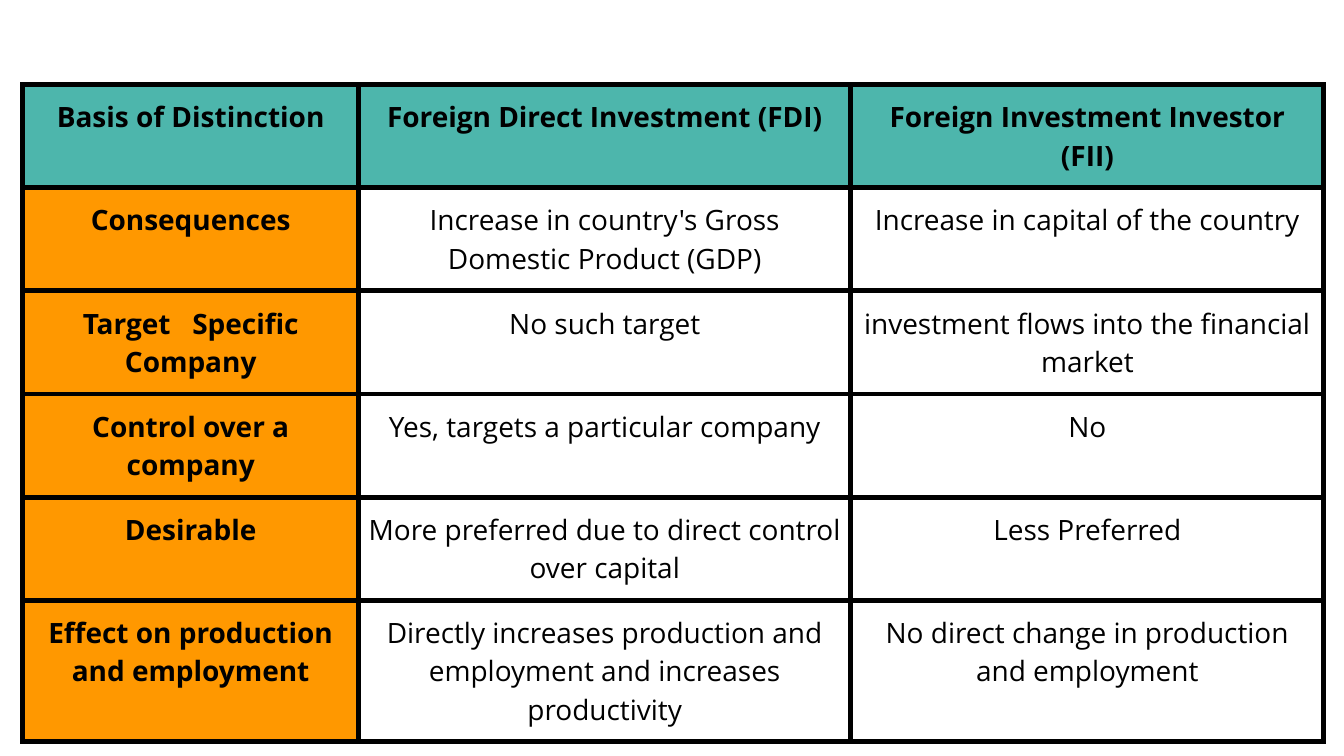
from pptx import Presentation
from pptx.dml.color import RGBColor
from pptx.enum.text import PP_ALIGN
from pptx.oxml import parse_xml
from pptx.oxml.ns import nsdecls
from pptx.util import Cm, Pt

BLACK = RGBColor(0x00, 0x00, 0x00)
TEAL = RGBColor(0x4D, 0xB6, 0xAC)
ORANGE = RGBColor(0xFF, 0x98, 0x00)

COL_WIDTHS = [6.35, 9.3, 8.94]
ROW_HEIGHTS = [1] * 5 + [1.45]
ROWS = [
    ("Basis of Distinction", "Foreign Direct Investment (FDI)",
     "Foreign Investment Investor (FII)"),
    ("Consequences", "Increase in country's Gross Domestic Product (GDP)",
     "Increase in capital of the country"),
    ("Target   Specific Company", "No such target",
     "investment flows into the financial market"),
    ("Control over a company", "Yes, targets a particular company", "No"),
    ("Desirable", "More preferred due to direct control over capital",
     "Less Preferred"),
    ("Effect on production and employment",
     "Directly increases production and employment and increases productivity",
     "No direct change in production and employment"),
]


def add_borders(cell, color, width):
    tc_pr = cell._tc.get_or_add_tcPr()
    for side in ("lnL", "lnR", "lnT", "lnB"):
        tc_pr.append(parse_xml(
            f'<a:{side} {nsdecls("a")} w="{width}"><a:solidFill>'
            f'<a:srgbClr val="{color}"/></a:solidFill></a:{side}>'))


prs = Presentation()
prs.slide_width, prs.slide_height = Cm(25.4), Cm(14.29)
s = prs.slides.add_slide(prs.slide_layouts[6])

frame = s.shapes.add_table(len(ROWS), len(COL_WIDTHS), Cm(0.43), Cm(1.6),
                           Cm(sum(COL_WIDTHS)), Cm(11.3))
table = frame.table
table.first_row = table.horz_banding = False
for column, width in zip(table.columns, COL_WIDTHS):
    column.width = Cm(width)
for row, height in zip(table.rows, ROW_HEIGHTS):
    row.height = Cm(height)
frame.height = Cm(11.3)

for i, texts in enumerate(ROWS):
    for j, text in enumerate(texts):
        cell = table.cell(i, j)
        cell.margin_left = cell.margin_right = Cm(0.18)
        cell.margin_top = cell.margin_bottom = Cm(0.25)
        add_borders(cell, BLACK, Pt(3))
        if i == 0 or j == 0:
            cell.fill.solid()
            cell.fill.fore_color.rgb = TEAL if i == 0 else ORANGE
        else:
            cell.fill.background()

        cell.text = text
        p = cell.text_frame.paragraphs[0]
        p.alignment = PP_ALIGN.CENTER
        p.space_before = Pt(12)
        p.font.name = "Open Sans"
        p.font.size = Pt(15)
        p.font.bold = i == 0 or j == 0
        p.font.color.rgb = BLACK

prs.save("out.pptx")
